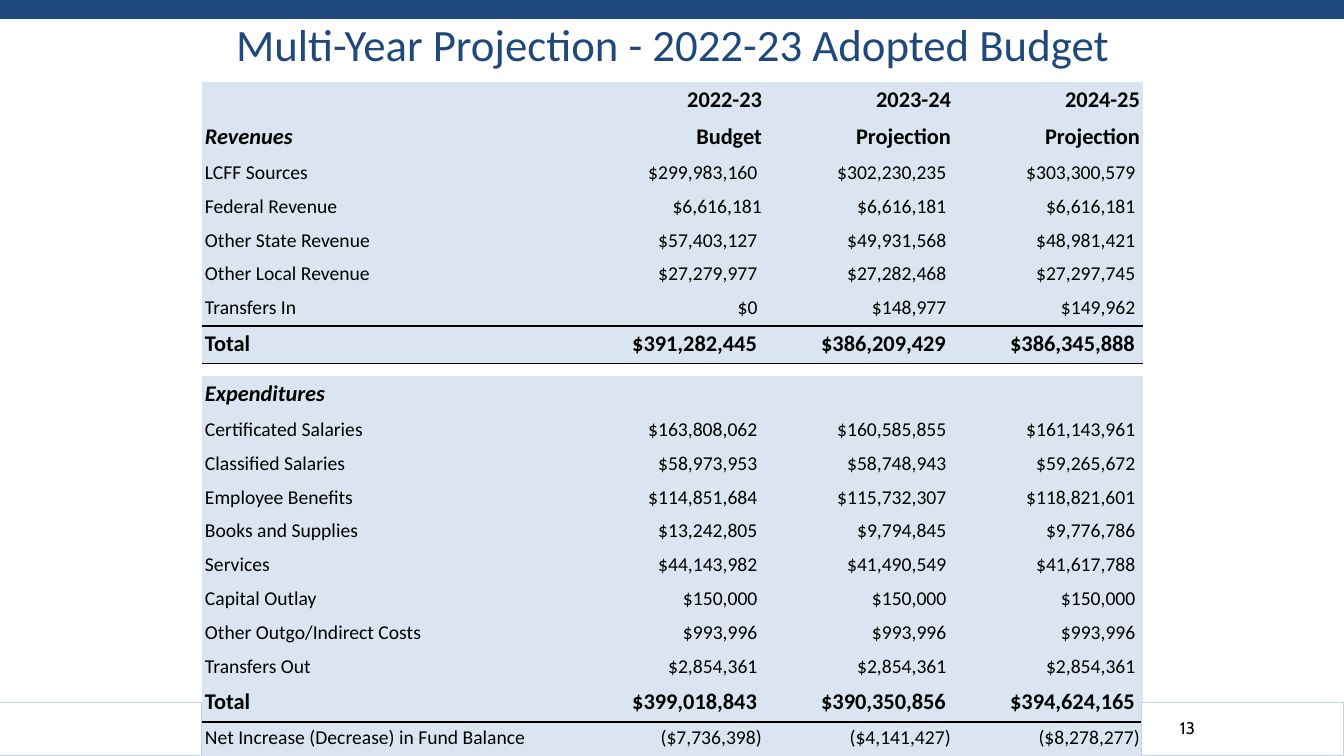
from lxml import etree
from pptx import Presentation
from pptx.dml.color import RGBColor
from pptx.enum.shapes import MSO_SHAPE
from pptx.enum.text import MSO_ANCHOR, PP_ALIGN
from pptx.oxml.ns import qn
from pptx.util import Pt

RECT = MSO_SHAPE.RECTANGLE
BOTTOM, MIDDLE = MSO_ANCHOR.BOTTOM, MSO_ANCHOR.MIDDLE
LEFT, CENTER, RIGHT = PP_ALIGN.LEFT, PP_ALIGN.CENTER, PP_ALIGN.RIGHT

# Content: (kind of row, label, three years)
TITLE = "Multi-Year Projection - 2022-23 Adopted Budget"
PAGE = "13"
ROWS = [
    ("head", "", "2022-23", "2023-24", "2024-25"),
    ("head", "Revenues", "Budget", "Projection", "Projection"),
    ("item", "LCFF Sources", "$299,983,160 ", "$302,230,235 ", "$303,300,579 "),
    ("item", "Federal Revenue", "$6,616,181", "$6,616,181 ", "$6,616,181 "),
    ("item", "Other State Revenue", "$57,403,127 ", "$49,931,568 ", "$48,981,421 "),
    ("item", "Other Local Revenue", "$27,279,977 ", "$27,282,468 ", "$27,297,745 "),
    ("item", "Transfers In", "$0 ", "$148,977 ", "$149,962 "),
    ("total", "Total", "$391,282,445 ", "$386,209,429 ", "$386,345,888 "),
    ("gap", "", "", "", ""),
    ("head", "Expenditures", "", "", ""),
    ("item", "Certificated Salaries", "$163,808,062 ", "$160,585,855 ", "$161,143,961 "),
    ("item", "Classified Salaries", "$58,973,953 ", "$58,748,943 ", "$59,265,672 "),
    ("item", "Employee Benefits", "$114,851,684 ", "$115,732,307 ", "$118,821,601 "),
    ("item", "Books and Supplies", "$13,242,805 ", "$9,794,845 ", "$9,776,786 "),
    ("item", "Services", "$44,143,982 ", "$41,490,549 ", "$41,617,788 "),
    ("item", "Capital Outlay", "$150,000 ", "$150,000 ", "$150,000 "),
    ("item", "Other Outgo/Indirect Costs", "$993,996 ", "$993,996 ", "$993,996 "),
    ("item", "Transfers Out", "$2,854,361 ", "$2,854,361 ", "$2,854,361 "),
    ("total", "Total", "$399,018,843 ", "$390,350,856 ", "$394,624,165 "),
    ("item", "Net Increase (Decrease) in Fund Balance",
     "($7,736,398)", "($4,141,427)", "($8,278,277)"),
]
RULES = (6, 18)  # rows with a line below
COLS = (374, 189, 189, 189)
HIGH = {"head": 33, "total": 33, "item": 30, "gap": 13}
SIZE = {"head": 16, "total": 16, "item": 14, "gap": 1}
HEX = {"navy": "1F497D", "pale": "DAE5F1", "white": "FFFFFF",
       "edge": "C6D3E3", "black": "000000"}
PLAIN = "{2D5ABB26-0587-4C30-8999-92F81FD0307C}"  # style without grid


def px(n):
    return round(n * 914400 / 100.8)


def color(name):
    return RGBColor.from_string(HEX[name])


def box(x, y, w, h, fill, edge=None):
    shape = slide.shapes.add_shape(RECT, px(x), px(y), px(w), px(h))
    shape.shadow.inherit = False
    shape.fill.solid()
    shape.fill.fore_color.rgb = color(fill)
    if edge:
        shape.line.color.rgb = color(edge)
        shape.line.width = Pt(0.75)
    else:
        shape.line.fill.background()


def style(para, size, tone, face="Calibri", align=LEFT):
    para.alignment = align
    para.font.size = Pt(size)
    para.font.name = face
    para.font.color.rgb = color(tone)


def rule(cell, side):
    line = etree.Element(qn("a:" + side), w=str(Pt(1)))
    fill = etree.SubElement(line, qn("a:solidFill"))
    etree.SubElement(fill, qn("a:srgbClr"), val=HEX["black"])
    cell._tc.get_or_add_tcPr().insert(0, line)


def fill_cell(cell, text, kind, row, col):
    gap = kind == "gap"
    cell.margin_left = cell.margin_right = px(3)
    cell.margin_top = px(0 if gap else 4)
    cell.margin_bottom = px(0 if gap else 6)
    cell.vertical_anchor = BOTTOM
    cell.fill.solid()
    cell.fill.fore_color.rgb = color("white" if gap else "pale")
    para = cell.text_frame.paragraphs[0]
    if text:
        para.text = text
        style(para, SIZE[kind], "black", align=RIGHT if col else LEFT)
        para.font.bold = kind != "item"
        para.font.italic = kind == "head" and col == 0
    else:
        etree.SubElement(para._p, qn("a:endParaRPr"), sz=str(SIZE[kind] * 100))
    if row in RULES:
        rule(cell, "lnB")
    if row - 1 in RULES:
        rule(cell, "lnT")


prs = Presentation()
prs.slide_width, prs.slide_height = px(1344), px(756)
slide = prs.slides.add_slide(prs.slide_layouts[5])

# Title
title = slide.shapes.title
title.left, title.top, title.width, title.height = px(72), px(26), px(1202), px(48)
frame = title.text_frame
frame.text = TITLE
frame.vertical_anchor = BOTTOM
style(frame.paragraphs[0], 32, "navy", align=CENTER)
frame.paragraphs[0].line_spacing = 0.7

# Bars at top and bottom
box(0, 0, 1344, 19, "navy")
box(0, 703, 1344, 53, "navy")

# Budget table
high = sum(HIGH[row[0]] for row in ROWS)
holder = slide.shapes.add_table(len(ROWS), len(COLS), px(202), px(82),
                                px(sum(COLS)), px(high))
table = holder.table
table.first_row = table.horz_banding = False
table._tbl.tblPr.find(qn("a:tableStyleId")).text = PLAIN
for col, wide in enumerate(COLS):
    table.columns[col].width = px(wide)
for row, (kind, *texts) in enumerate(ROWS):
    table.rows[row].height = px(HIGH[kind])
    for col, text in enumerate(texts):
        fill_cell(table.cell(row, col), text, kind, row, col)

# White corners and page number
for x in (0, 1142):
    box(x, 703, 202, 53, "white", "edge")
note = slide.shapes.add_textbox(px(1175), px(708), px(104), px(40))
frame = note.text_frame
frame.word_wrap = True
frame.vertical_anchor = MIDDLE
frame.margin_left = px(5)
frame.text = PAGE
style(frame.paragraphs[0], 12, "black", "Cabin")

prs.save("out.pptx")
